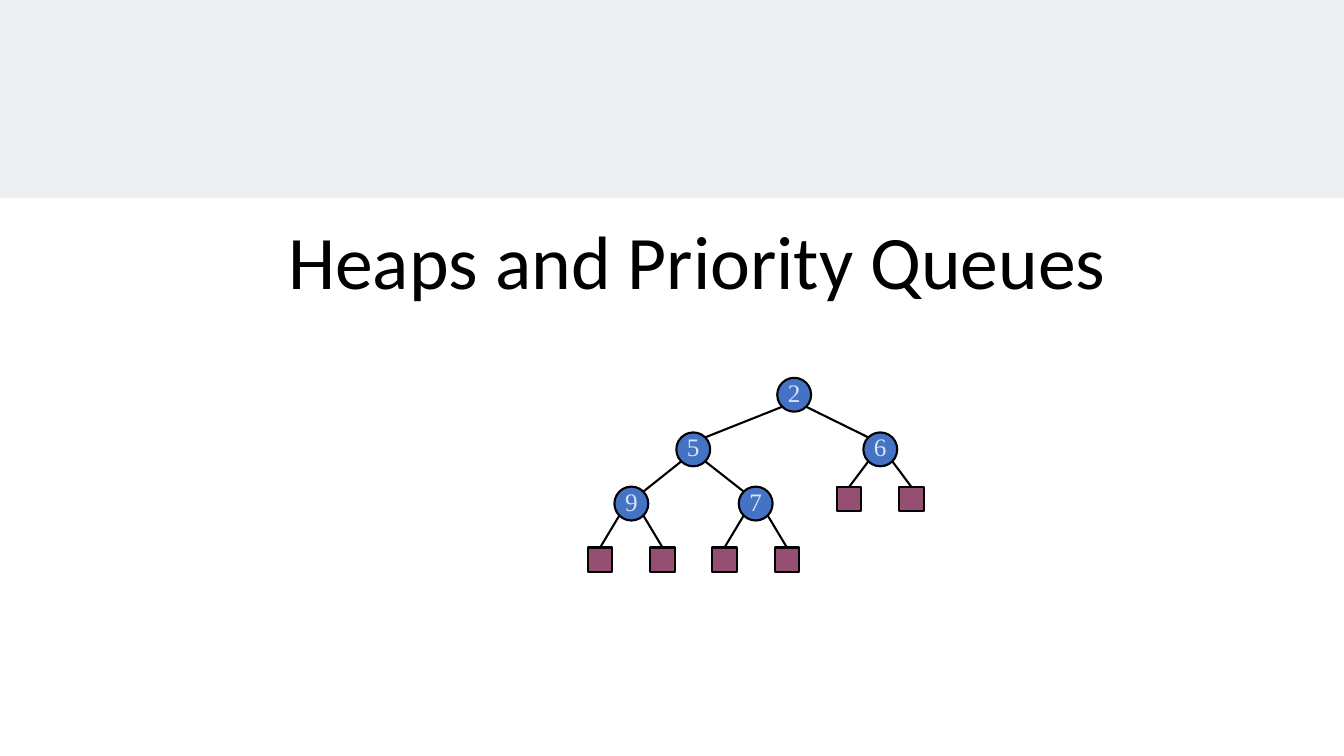
from lxml import etree
from pptx import Presentation
from pptx.dml.color import RGBColor
from pptx.enum import shapes, text
from pptx.oxml import ns
from pptx.util import Pt

NAVY = RGBColor(0x00, 0x20, 0x60)
BLUE = RGBColor(0x44, 0x72, 0xC4)
PALE_BLUE = RGBColor(0xDA, 0xE3, 0xF3)
PLUM = RGBColor(0x95, 0x4F, 0x72)
BLACK = RGBColor(0, 0, 0)

NODE_SIZE = 24.2
LEAF_SIZE = 17.4
CORNER = 8.6  # offset of the 45-degree point on a node's rim
LEAF_SPREAD = 22.3

# key: centre x, centre y, child nodes
NODES = {
    "2": (567.3, 282, "56"),
    "5": (495.2, 321, "97"),
    "6": (628.8, 321, ""),
    "9": (451, 359.7, ""),
    "7": (539.8, 359.7, ""),
}
LEAF_ROWS = {"6": 356.6, "9": 399.8, "7": 399.8}


def apply(target, values):
    for name, value in values.items():
        setattr(target, name, value)


class HeapSlide:
    def __init__(self, presentation):
        self.slide = presentation.slides.add_slide(presentation.slide_layouts[0])
        subtitle = self.slide.placeholders[1].element
        subtitle.getparent().remove(subtitle)
        self.tree = self.slide.shapes.add_group_shape().shapes
        self.line_width = Pt(1.5)
        self.title_font = {"name": "Calibri", "size": Pt(54)}
        self.key_font = {"name": "Times New Roman", "size": Pt(18)}

    def band(self, left, top, width, height, opacity):
        """Add a translucent band behind everything else."""
        band = self.slide.shapes.add_shape(
            shapes.MSO_SHAPE.RECTANGLE, Pt(left), Pt(top), Pt(width), Pt(height))
        band.shadow.inherit = False
        band.line.fill.background()
        band.fill.solid()
        band.fill.fore_color.rgb = NAVY
        color = band.element.spPr.find(".//" + ns.qn("a:srgbClr"))
        etree.SubElement(color, ns.qn("a:alpha"), val=str(opacity * 1000))
        self.slide.shapes.element.insert(2, band.element)

    def label(self, shape, words, font, color, frame_format):
        apply(shape.text_frame, frame_format)
        paragraph = shape.text_frame.paragraphs[0]
        paragraph.alignment = text.PP_ALIGN.CENTER
        run = paragraph.add_run()
        run.text = words
        apply(run.font, font)
        run.font.color.rgb = color
        return paragraph

    def title(self, words, left, top, width, height):
        title = self.slide.shapes.title
        apply(title, {"left": Pt(left), "top": Pt(top),
                      "width": Pt(width), "height": Pt(height)})
        paragraph = self.label(title, words, self.title_font, BLACK, {
            "vertical_anchor": text.MSO_ANCHOR.BOTTOM,
            "auto_size": text.MSO_AUTO_SIZE.NONE, "word_wrap": True})
        paragraph.line_spacing = 0.9

    def mark(self, kind, x, y, size, color):
        """Add an outlined tree shape centred on x, y."""
        shape = self.tree.add_shape(
            kind, Pt(x - size / 2), Pt(y - size / 2), Pt(size), Pt(size))
        shape.shadow.inherit = False
        shape.fill.solid()
        shape.fill.fore_color.rgb = color
        shape.line.color.rgb = BLACK
        shape.line.width = self.line_width
        return shape

    def node(self, key, x, y):
        circle = self.mark(shapes.MSO_SHAPE.OVAL, x, y, NODE_SIZE, BLUE)
        self.label(circle, key, self.key_font, PALE_BLUE, {
            "margin_left": 0, "margin_right": 0, "margin_top": 0,
            "margin_bottom": Pt(3.6), "word_wrap": False,
            "vertical_anchor": text.MSO_ANCHOR.MIDDLE})

    def leaf(self, x, y):
        self.mark(shapes.MSO_SHAPE.RECTANGLE, x, y, LEAF_SIZE, PLUM)

    def edge(self, x1, y1, x2, y2):
        edge = self.tree.add_connector(
            shapes.MSO_CONNECTOR.STRAIGHT, Pt(x1), Pt(y1), Pt(x2), Pt(y2))
        edge.line.color.rgb = BLACK
        edge.line.width = self.line_width
        etree.SubElement(edge.element.spPr, ns.qn("a:effectLst"))

    def heap(self):
        for key, (x, y, children) in NODES.items():
            self.node(key, x, y)
            for side, child in zip((-1, 1), children):
                child_x, child_y, _ = NODES[child]
                self.edge(x + side * CORNER, y + CORNER,
                          child_x - side * CORNER, child_y - CORNER)
            if key in LEAF_ROWS:
                leaf_y = LEAF_ROWS[key]
                for side in (-1, 1):
                    leaf_x = x + side * LEAF_SPREAD
                    self.leaf(leaf_x, leaf_y)
                    self.edge(x + side * CORNER, y + CORNER,
                              leaf_x, leaf_y - LEAF_SIZE / 2)


def main():
    presentation = Presentation()
    apply(presentation, {"slide_width": Pt(960), "slide_height": Pt(540)})
    slide = HeapSlide(presentation)
    slide.band(-0.5, 0, 960.5, 141.6, opacity=7)
    slide.title("Heaps and Priority Queues", 192, 132, 612, 90)
    slide.heap()
    presentation.save("out.pptx")


if __name__ == "__main__":
    main()
